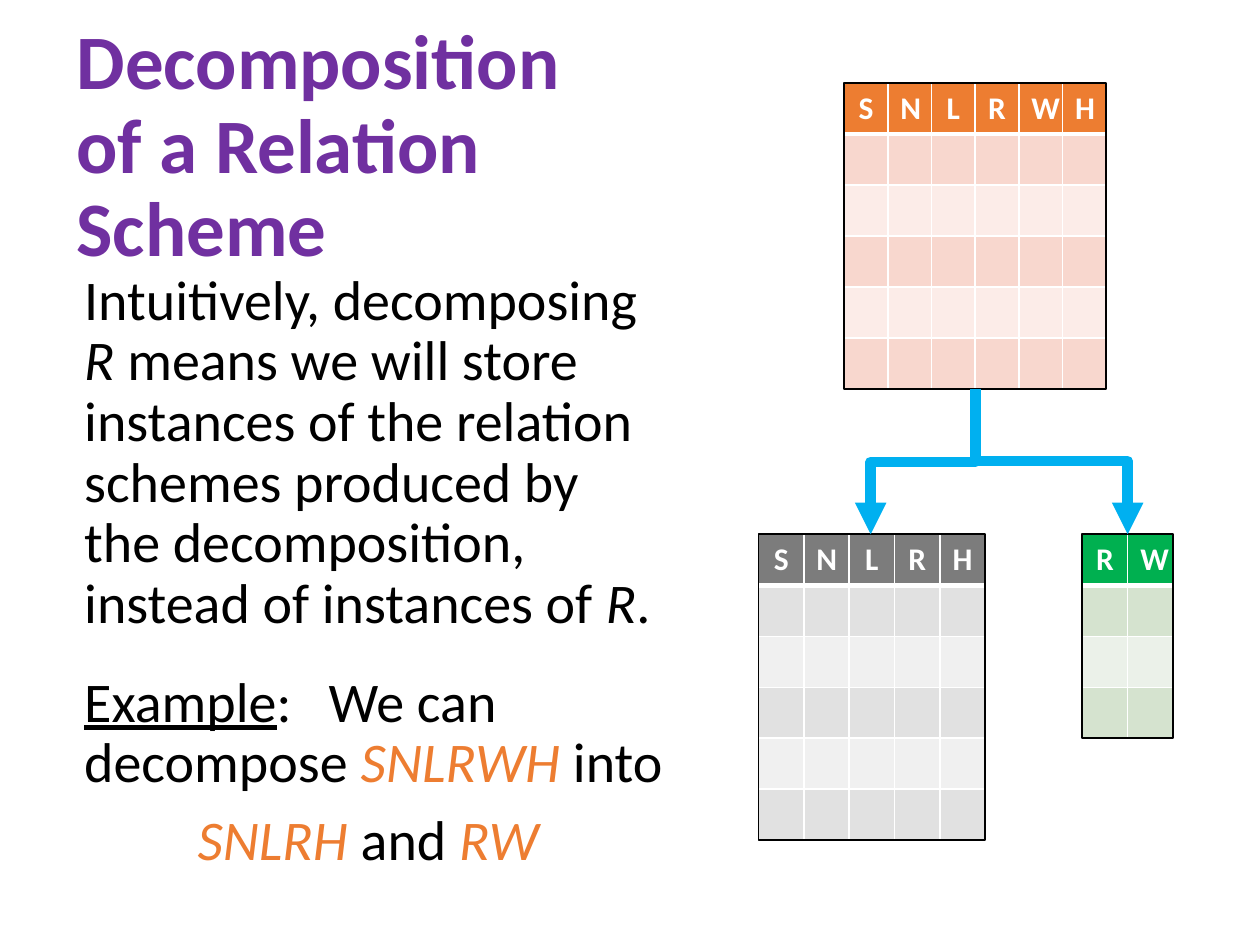
from dataclasses import dataclass
from lxml.etree import SubElement as Sub
from pptx import Presentation
from pptx.dml.color import RGBColor as RGB
from pptx.enum.shapes import MSO_CONNECTOR as Link, MSO_SHAPE as Shape
from pptx.enum.text import MSO_ANCHOR as Anchor, PP_ALIGN as Align
from pptx.oxml.ns import qn
from pptx.util import Inches, Pt


@dataclass(frozen=True)
class Theme:
    font: str = "Calibri"
    title: str = "7030A0"
    ink: str = "000000"
    paper: str = "FFFFFF"
    accent: str = "ED7D31"
    arrow: str = "00B0F0"
    orange: tuple = ("ED7D31", "F8D7CE", "FCECE8")
    gray: tuple = ("7C7C7C", "E1E1E1", "F0F0F0")
    green: tuple = ("00B050", "D5E3CF", "EBF1E9")
    head_size: int = 44
    body_size: int = 32
    cell_size: int = 18


THEME = Theme()
ROW = 0.405


def style(run, size, color, bold=False, italic=False):
    font = run.font
    font.name, font.size = THEME.font, Pt(size)
    font.bold, font.italic = bold, italic
    font.color.rgb = RGB.from_string(color)


def add_frame(slide, box):
    frame = slide.shapes.add_textbox(*map(Inches, box)).text_frame
    frame.word_wrap = True
    return frame


def add_title(slide, box, text):
    frame = add_frame(slide, box)
    frame.vertical_anchor = Anchor.MIDDLE
    frame.text = text
    para = frame.paragraphs[0]
    para.line_spacing = 0.9
    style(para.runs[0], THEME.head_size, THEME.title, bold=True)


def add_body(slide, box, paras):
    frame = add_frame(slide, box)
    for i, parts in enumerate(paras):
        para = frame.add_paragraph() if i else frame.paragraphs[0]
        para.line_spacing, para.space_before = 0.9, Pt(10)
        for text, look in parts:
            run = para.add_run()
            run.text = text
            color = THEME.accent if look == "name" else THEME.ink
            style(run, THEME.body_size, color, italic=look in ("name", "var"))
            run.font.underline = look == "under"
    first, lead, last = frame.paragraphs
    first.space_after = Pt(12)
    tabs = Sub(lead._p.get_or_add_pPr(), qn("a:tabLst"))
    Sub(tabs, qn("a:tab"), pos=str(Inches(1.94)), algn="l")
    last._p.get_or_add_pPr().set("marL", str(Inches(0.9)))


def add_edges(cell, row):
    props = cell._tc.get_or_add_tcPr()
    thick = {"lnT": row == 1, "lnB": row == 0}
    for side in ("lnL", "lnR", "lnT", "lnB"):
        width = Pt(3 if thick.get(side) else 1)
        line = Sub(props, qn(f"a:{side}"), w=str(width))
        fill = Sub(line, qn("a:solidFill"))
        Sub(fill, qn("a:srgbClr"), val=THEME.paper)


def add_grid(slide, box, names, count, shades):
    place = [Inches(v) for v in box]
    table = slide.shapes.add_table(count, len(names), *place).table
    for col in table.columns:
        col.width = Inches(box[2] / len(names))
    for r, row in enumerate(table.rows):
        row.height = Inches(box[3] / count)
        shade = shades[0] if r == 0 else shades[2 - r % 2]
        for c, cell in enumerate(row.cells):
            add_edges(cell, r)
            cell.fill.solid()
            cell.fill.fore_color.rgb = RGB.from_string(shade)
            para = cell.text_frame.paragraphs[0]
            para.alignment = Align.CENTER
            if r == 0:
                para.text = names[c]
                style(para.runs[0], THEME.cell_size, THEME.paper, bold=True)
    frame = slide.shapes.add_shape(Shape.RECTANGLE, *place)
    frame.shadow.inherit = False
    frame.fill.background()
    frame.line.color.rgb = RGB.from_string(THEME.ink)
    frame.line.width = Pt(1)


def add_elbow(slide, box, kind, turn=0):
    x, y, w, h = box
    ends = map(Inches, (x, y, x + w, y + h))
    link = slide.shapes.add_connector(Link.ELBOW, *ends)
    link.line.color.rgb = RGB.from_string(THEME.arrow)
    link.line.width = Pt(6)
    props = link._element.spPr
    props.find(qn("a:prstGeom")).set("prst", kind)
    props.find(qn("a:xfrm")).set("rot", str(turn * 60000))
    Sub(props.find(qn("a:ln")), qn("a:tailEnd"), type="triangle")
    Sub(props, qn("a:effectLst"))


def add_split(slide, box):
    x, y = box
    low = y + 3.58
    add_grid(slide, (x + 0.68, y, 2.08, 6 * ROW), "SNLRWH", 6, THEME.orange)
    add_grid(slide, (x, low, 1.8, 6 * ROW), "SNLRH", 6, THEME.gray)
    add_grid(slide, (x + 2.57, low, 0.72, 4 * ROW), "RW", 4, THEME.green)
    add_elbow(slide, (x + 0.73, y + 2.59, 1.15, 0.83), "bentConnector3", 90)
    add_elbow(slide, (x + 1.72, y + 3, 1.21, 0.58), "bentConnector2")


def main():
    deck = Presentation()
    deck.slide_width, deck.slide_height = Inches(10), Inches(7.5)
    slide = deck.slides.add_slide(deck.slide_layouts[6])
    add_title(slide, (0.51, 0.57, 4.64, 1.21),
              "Decomposition of a Relation Scheme")
    add_body(slide, (0.57, 2.11, 4.8, 4.98), [
        [("Intuitively, decomposing ", ""), ("R", "var"),
         (" means we will store instances of the relation schemes produced "
          "by the decomposition, instead of instances of ", ""),
         ("R", "var"), (".", "")],
        [("Example", "under"), (":\tWe can decompose ", ""),
         ("SNLRWH", "name"), (" into", "")],
        [("SNLRH", "name"), (" and ", ""), ("RW", "name")],
    ])
    add_split(slide, (6.02, 0.66))
    deck.save("out.pptx")


if __name__ == "__main__":
    main()
